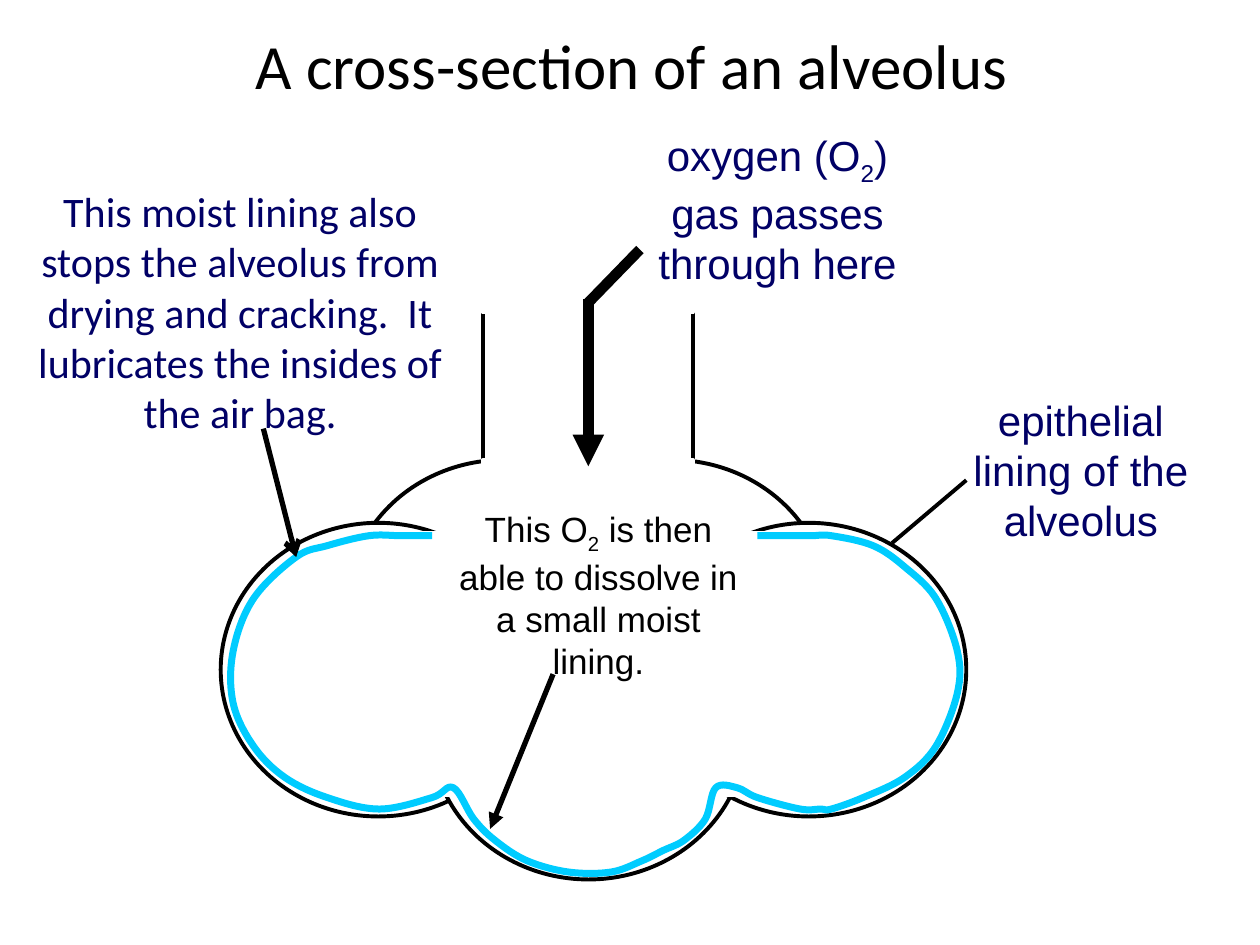
"""Build a slide showing a labelled cross-section of an alveolus."""
from lxml import etree
from pptx import Presentation
from pptx.dml.color import RGBColor
from pptx.enum.shapes import MSO_CONNECTOR, MSO_SHAPE
from pptx.enum.text import MSO_ANCHOR, PP_ALIGN
from pptx.oxml.ns import qn
from pptx.util import Cm, Pt

OVAL, RECTANGLE = MSO_SHAPE.OVAL, MSO_SHAPE.RECTANGLE
STRAIGHT = MSO_CONNECTOR.STRAIGHT
TOP, MIDDLE = MSO_ANCHOR.TOP, MSO_ANCHOR.MIDDLE
CENTER = PP_ALIGN.CENTER

COLORS = {"black": "000000", "white": "FFFFFF", "navy": "010066", "moist": "00CCFF"}

LOBE_SIZE = (6.35, 5.92)
LOBES = [(10.36, 9.27), (6.99, 9.27), (4.45, 10.54), (8.69, 11.81), (13.13, 10.54)]

NECK_LEFT, NECK_WIDTH = 9.73, 4.24
RECTANGLES = [
    ((NECK_LEFT, 6.30, NECK_WIDTH, 4.65), "black"),
    ((7.19, 10.74, 9.53, 5.28), "white"),
    ((NECK_LEFT, 9.27, NECK_WIDTH, 2.34), "white"),
    ((NECK_LEFT, 5.87, NECK_WIDTH, 0.43), "white"),
]

MOIST_LINING = [
    (8.71, 10.80), (8.08, 10.80), (7.44, 10.80), (6.60, 11.00), (5.97, 11.23),
    (5.11, 12.07), (4.70, 13.13), (4.70, 14.17), (5.11, 15.04), (5.74, 15.67),
    (6.60, 16.08), (7.65, 16.31), (8.71, 16.08), (9.14, 15.88), (9.55, 16.51),
    (9.98, 16.94), (10.62, 17.35), (11.46, 17.58), (12.32, 17.58), (12.95, 17.35),
    (13.36, 17.15), (13.79, 16.94), (14.22, 16.51), (14.43, 15.88), (14.86, 15.88),
    (15.27, 16.08), (16.13, 16.31), (16.54, 16.31), (16.76, 16.31), (17.40, 16.08),
    (18.24, 15.67), (18.87, 15.04), (19.30, 13.97), (19.30, 13.13), (18.87, 12.07),
    (18.24, 11.43), (17.60, 11.00), (16.76, 10.80), (16.33, 10.80), (15.49, 10.80),
    (15.27, 10.80),
]

LINES = [
    ((12.90, 5.03), (11.86, 6.10), 6, None),
    ((11.86, 6.02), (11.86, 9.40), 6, "triangle"),
    ((19.48, 9.68), (17.98, 10.95), 2.25, None),
    ((11.15, 13.59), (9.88, 16.71), 3, "triangle"),
    ((5.31, 8.64), (5.97, 11.23), 3, "arrow"),
]

SUBSCRIPT = "2"
TEXTS = [
    (["A cross-section of an alveolus"],
     dict(box=(1.30, 0.53, 22.86, 1.55), size=36, font="Calibri", color="black",
          anchor=MIDDLE, before=0)),
    (["oxygen (O", SUBSCRIPT, ") gas passes through here"],
     dict(box=(12.50, 2.49, 6.35, 3.30))),
    (["This O", SUBSCRIPT, " is then able to dissolve in a small moist lining."],
     dict(box=(8.89, 10.11, 6.35, 3.63), size=20, color="black")),
    (["epithelial lining of the alveolus"], dict(box=(19.25, 7.82, 5.08, 3.30))),
    (["This moist lining also stops the alveolus from drying and cracking.  "
      "It lubricates the insides of the air bag."],
     dict(box=(0.38, 3.61, 8.92, 5.38), font="Calibri")),
]


def rgb(name):
    return RGBColor.from_string(COLORS[name])


def add_outline(slide, preset, box, line_color):
    shape = slide.shapes.add_shape(preset, *map(Cm, box))
    shape.shadow.inherit = False
    shape.fill.solid()
    shape.fill.fore_color.rgb = rgb("white")
    shape.line.color.rgb = rgb(line_color)
    shape.line.width = Pt(2.25)


def add_line(slide, start, end, width, arrowhead):
    connector = slide.shapes.add_connector(STRAIGHT, *map(Cm, start + end))
    connector.line.color.rgb = rgb("black")
    connector.line.width = Pt(width)
    properties = connector._element.spPr
    if arrowhead:
        etree.SubElement(properties.find(qn("a:ln")), qn("a:tailEnd"), type=arrowhead)
    etree.SubElement(properties, qn("a:effectLst"))


def add_smooth_curve(slide, anchors, color, width):
    """Draw a curve whose tangent at each anchor follows its two neighbours."""
    points = [(Cm(x), Cm(y)) for x, y in anchors]
    builder = slide.shapes.build_freeform(*points[0])
    builder.add_line_segments(points[1:], close=False)
    shape = builder.convert_to_shape()
    shape.shadow.inherit = False
    shape.fill.background()
    shape.line.color.rgb = rgb(color)
    shape.line.width = Pt(width)

    nodes = [(int(point.get("x")), int(point.get("y")))
             for point in shape._element.iter(qn("a:pt"))]
    padded = [nodes[0]] + nodes + [nodes[-1]]
    segments = list(shape._element.iter(qn("a:lnTo")))
    for segment, before, start, end, after in zip(
            segments, padded, padded[1:], padded[2:], padded[3:]):
        leaving = [s + (e - b) / 6 for b, s, e in zip(before, start, end)]
        arriving = [e - (a - s) / 6 for s, e, a in zip(start, end, after)]
        curve = etree.Element(qn("a:cubicBezTo"))
        for x, y in (leaving, arriving, end):
            etree.SubElement(curve, qn("a:pt"), x=str(round(x)), y=str(round(y)))
        segment.getparent().replace(segment, curve)


def add_text(slide, parts, *, box, size=24, font="Arial", color="navy",
             anchor=TOP, before=2):
    frame = slide.shapes.add_textbox(*map(Cm, box)).text_frame
    frame.word_wrap = True
    frame.vertical_anchor = anchor
    paragraph = frame.paragraphs[0]
    paragraph.alignment = CENTER
    paragraph.space_before = Pt(before)
    for part in parts:
        run = paragraph.add_run()
        run.text = part
        run.font.size = Pt(size)
        run.font.name = font
        run.font.color.rgb = rgb(color)
        if part == SUBSCRIPT:
            run._r.get_or_add_rPr().set("baseline", "-25000")


def main():
    presentation = Presentation()
    presentation.slide_width, presentation.slide_height = Cm(25.4), Cm(19.05)
    slide = presentation.slides.add_slide(presentation.slide_layouts[6])
    for position in LOBES:
        add_outline(slide, OVAL, position + LOBE_SIZE, "black")
    for box, line_color in RECTANGLES:
        add_outline(slide, RECTANGLE, box, line_color)
    add_smooth_curve(slide, MOIST_LINING, "moist", 4)
    for line in LINES:
        add_line(slide, *line)
    for parts, text_format in TEXTS:
        add_text(slide, parts, **text_format)
    presentation.save("out.pptx")


if __name__ == "__main__":
    main()
